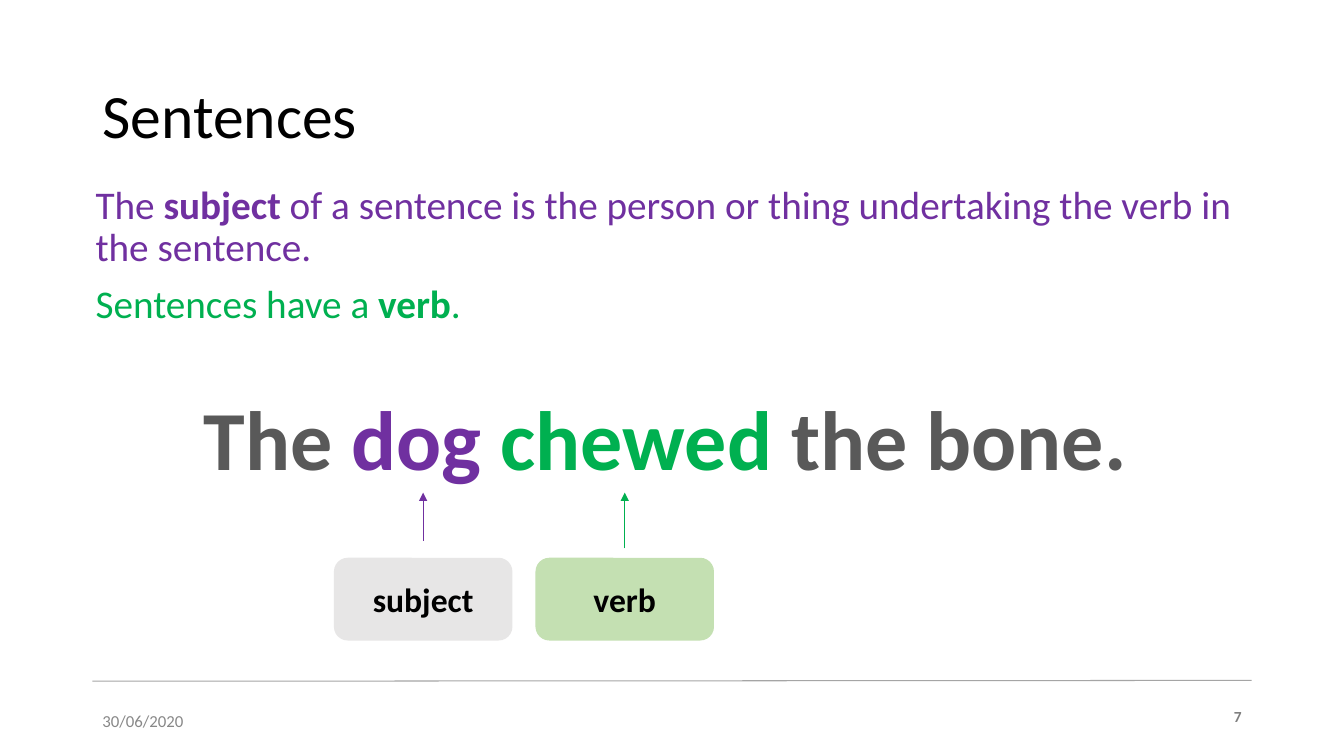
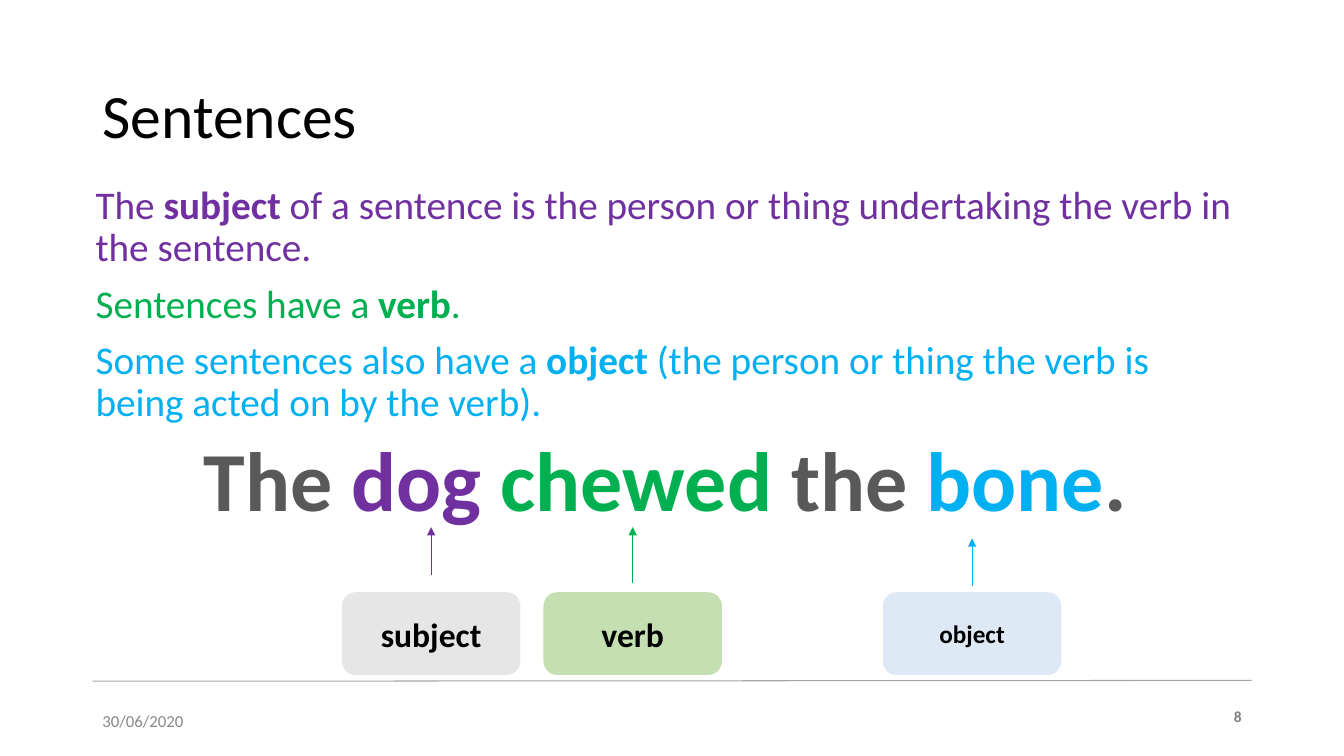
from lxml import etree
from pptx import Presentation, util as u
from pptx.dml.color import RGBColor
from pptx.enum import shapes, text
from pptx.oxml.ns import qn

COLUMNS, ROWS = 160, 90
LEFT, RIGHT = 11, 149
FONT = "Calibri"
BLACK, DARK, GREY, RULE = "000000", "595959", "7F7F7F", "A5A5A5"
PURPLE, GREEN, BLUE = "7030A0", "00B050", "00B0F0"
DATE = "30/06/2020"


def color(hex_value):
    return RGBColor.from_string(hex_value)


class Deck:
    """Holds the shared style and the slide being built; lengths are grid units."""

    def __init__(self):
        self.presentation = Presentation()
        self.presentation.slide_width = u.Inches(13.33)
        self.presentation.slide_height = u.Inches(7.5)
        self.slide = None

    def x(self, columns):
        return round(self.presentation.slide_width * columns / COLUMNS)

    def y(self, rows):
        return round(self.presentation.slide_height * rows / ROWS)

    def box(self, left, top, width, height):
        return self.x(left), self.y(top), self.x(width), self.y(height)

    def new_slide(self, title, number):
        self.slide = self.presentation.slides.add_slide(self.presentation.slide_layouts[6])
        self.textbox((LEFT, 83.4, 36, 4.8), DATE, 12, "888888", middle=True)
        self.line((LEFT, 81.1), (RIGHT, 81), RULE)
        self.textbox((RIGHT - 5, 83.6, 5, 3.5), str(number), 11, GREY, bold=True,
                     align=text.PP_ALIGN.RIGHT)
        self.textbox((LEFT, 4.8, RIGHT - LEFT, 17.4), title, 44, BLACK, middle=True)

    def add_run(self, paragraph, words, size, ink, bold=False):
        run = paragraph.add_run()
        run.text = words
        run.font.name, run.font.size, run.font.bold = FONT, u.Pt(size), bold
        run.font.color.rgb = color(ink)

    def textbox(self, place, words, size, ink, bold=False, middle=False,
                align=text.PP_ALIGN.LEFT):
        frame = self.slide.shapes.add_textbox(*self.box(*place)).text_frame
        frame.word_wrap = True
        frame.vertical_anchor = text.MSO_ANCHOR.MIDDLE if middle else text.MSO_ANCHOR.TOP
        frame.paragraphs[0].alignment = align
        self.add_run(frame.paragraphs[0], words, size, ink, bold)

    def body(self, rules, example, example_gap):
        """Writes the rules, then the large example sentence example_gap points below."""
        frame = self.slide.shapes.add_textbox(*self.box(10.2, 21.5, 138, 54)).text_frame
        frame.word_wrap = True
        for index, (ink, *parts) in enumerate(rules):
            paragraph = frame.add_paragraph() if index else frame.paragraphs[0]
            paragraph.line_spacing = 0.9
            paragraph.space_before = u.Pt(10 if index else 0)
            for words, bold in zip(parts, (False, True, False)):
                self.add_run(paragraph, words, 28, ink, bold)
        paragraph = frame.add_paragraph()
        paragraph.alignment = text.PP_ALIGN.CENTER
        paragraph.line_spacing, paragraph.space_before = 0.9, u.Pt(example_gap)
        for words, ink in example:
            self.add_run(paragraph, words, 60, ink, bold=True)

    def line(self, start, end, ink, arrow=False):
        connector = self.slide.shapes.add_connector(
            shapes.MSO_CONNECTOR.STRAIGHT,
            self.x(start[0]), self.y(start[1]), self.x(end[0]), self.y(end[1]))
        connector.line.color.rgb = color(ink)
        connector.line.width = u.Pt(0.75)
        if arrow:
            etree.SubElement(connector.line._get_or_add_ln(), qn("a:tailEnd"), type="triangle")
        etree.SubElement(connector._element.spPr, qn("a:effectLst"))

    def label(self, left, top, words, fill, ink, gap, reach, size=24):
        """Adds a label and an arrow running from gap to reach rows above it."""
        width, height = 21.25, 9.85
        shape = self.slide.shapes.add_shape(
            shapes.MSO_SHAPE.ROUNDED_RECTANGLE, *self.box(left, top, width, height))
        shape.shadow.inherit = False
        shape.fill.solid()
        shape.fill.fore_color.rgb = color(fill)
        shape.line.fill.background()
        frame = shape.text_frame
        frame.vertical_anchor = text.MSO_ANCHOR.MIDDLE
        frame.paragraphs[0].alignment = text.PP_ALIGN.CENTER
        self.add_run(frame.paragraphs[0], words, size, BLACK, bold=True)
        center = left + width / 2
        self.line((center, top - gap), (center, top - reach), ink, arrow=True)

    def subject_and_verb(self, left, top):
        self.label(left + 24, top, "verb", "C4E0B2", GREEN, 1.1, 7.75)
        self.label(left, top, "subject", "E7E6E6", PURPLE, 2, 7.75)


def main():
    deck = Deck()
    rules = [
        (PURPLE, "The", " subject ",
         "of a sentence is the person or thing undertaking the verb in the sentence."),
        (GREEN, "Sentences have a ", "verb", "."),
    ]
    object_rule = (BLUE, "Some sentences also have a ", "object ",
                   "(the person or thing the verb is being acted on by the verb).")
    opening = [("The ", DARK), ("dog ", PURPLE), ("chewed ", GREEN)]

    deck.new_slide("Sentences", 7)
    deck.body(rules, opening + [("the bone.", DARK)], 51)
    deck.subject_and_verb(39.75, 66.4)

    deck.new_slide("Sentences", 8)
    deck.body(rules + [object_rule],
              opening + [("the ", DARK), ("bone", BLUE), (".", DARK)], 10)
    deck.label(105.1, 70.5, "object", "DDEAF6", BLUE, 0.75, 6.4, size=18)
    deck.subject_and_verb(40.7, 70.5)

    deck.presentation.save("out.pptx")


if __name__ == "__main__":
    main()
